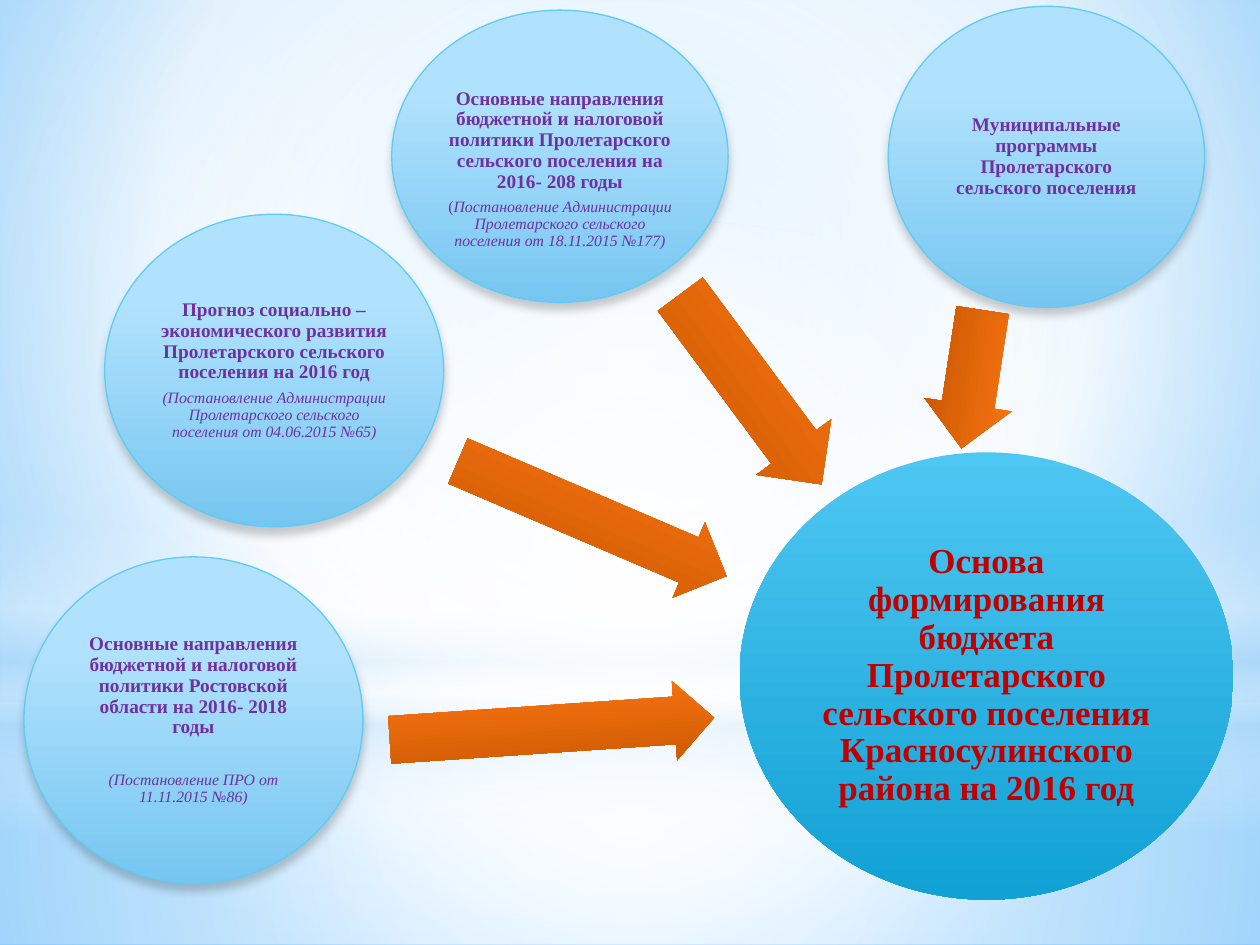
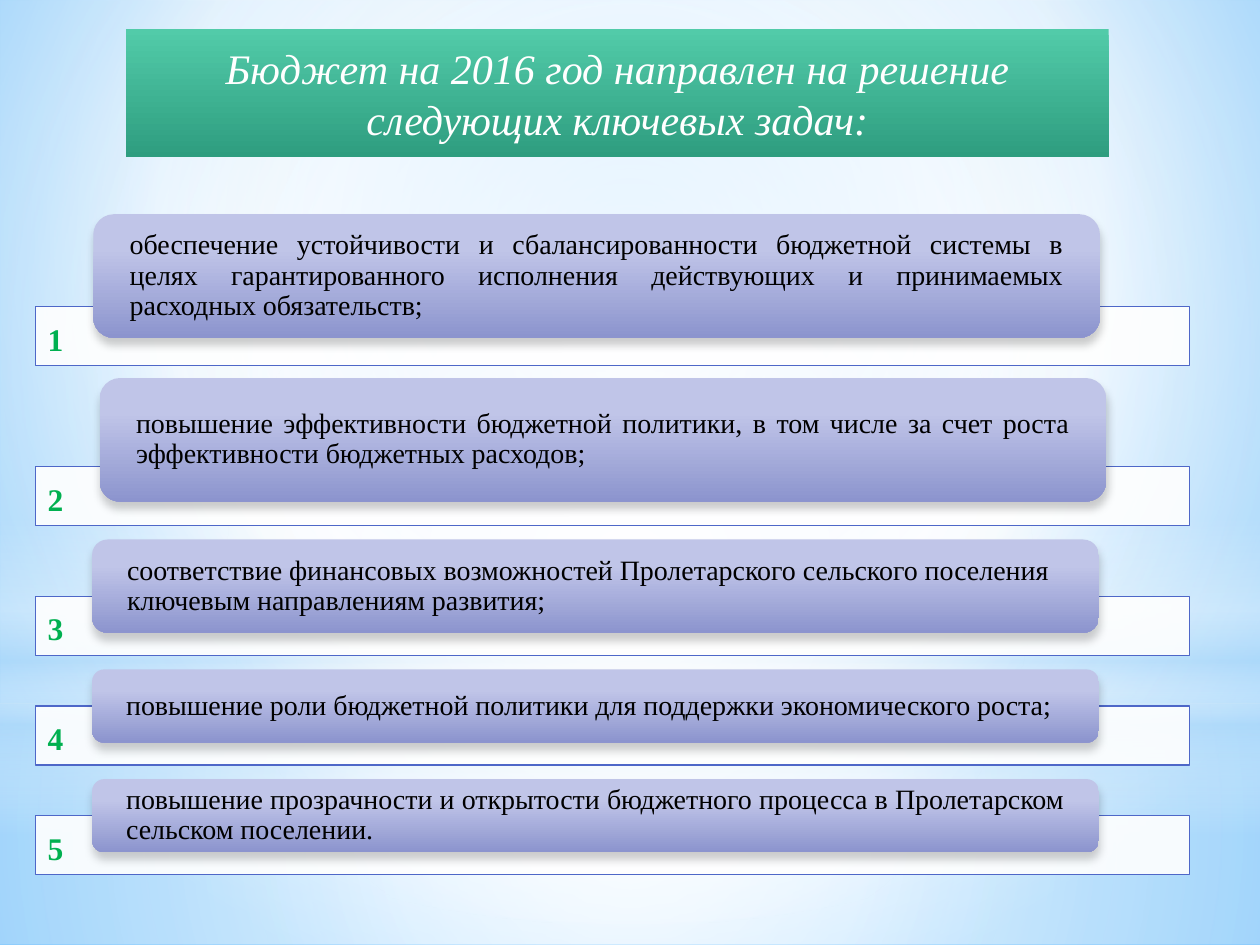
from lxml import etree
from pptx import Presentation
from pptx.dml.color import RGBColor as RGB
from pptx.enum.shapes import MSO_SHAPE as KIND
from pptx.enum.text import MSO_ANCHOR as ANCHOR, MSO_AUTO_SIZE as AUTO, PP_ALIGN as ALIGN
from pptx.oxml.ns import qn
from pptx.util import Pt

FONT = "Times New Roman"
WIDE, HIGH = 720, 540
HEX = {
    "white": "FFFFFF", "black": "000000", "haze": "B4DCFA",
    "sky": "9ED5FF", "blue": "5BB9FF", "rim": "5ECCF3", "edge": "4E67C8",
    "violet": "7030A0", "red": "C00000", "green": "00B050",
}
# Stops: position, colour, opacity
FADES = {
    "back": [(0, HEX["sky"], 100), (60, HEX["white"], 100), (100, HEX["blue"], 100)],
    "floor": [(0, HEX["white"], 91), (37, HEX["white"], 76), (100, HEX["haze"], 79)],
    "wall": [(0, HEX["white"], 89), (48, HEX["white"], 62), (100, HEX["haze"], 79)],
    "mist": [(0, HEX["white"], 0), (29, HEX["white"], 30), (45, HEX["haze"], 40),
             (55, HEX["white"], 26), (65, HEX["haze"], 60), (100, HEX["white"], 0)],
    "glow": [(0, HEX["white"], 100), (56, HEX["white"], 0)],
    "core": [(0, "4EC7F2", 100), (100, "11A1D4", 100)],
    "source": [(28, "B1E2FD", 100), (100, "76C6F1", 100)],
    "arrow": [(0, "FF7813", 100), (100, "C45400", 100)],
    "card": [(28, "C0C5E8", 100), (100, "8C94CE", 100)],
    "title": [(0, "52CBA9", 100), (100, "2E9D7F", 100)],
}
MID = (50, 50, 50, 50)

# Box, top inset, bold text, plain lead, italic text, gap between the two
SOURCES = [
    ((223.9, 5.8, 192.2, 167), 16.5,
     "Основные направления бюджетной и налоговой политики Пролетарского "
     "сельского поселения на 2016- 208 годы",
     "(", "Постановление Администрации Пролетарского сельского "
     "поселения от 18.11.2015 №177)", 0),
    ((507.6, 3.6, 180.7, 172.1), 1.5,
     "Муниципальные программы Пролетарского сельского поселения", "", "", 0),
    ((13.7, 318.2, 193.7, 186.5), 1.5,
     "Основные направления бюджетной и налоговой политики Ростовской "
     "области на 2016- 2018 годы",
     "", "(Постановление ПРО от 11.11.2015 №86)", 15.5),
    ((59.8, 122.4, 193.7, 178.6), 1.5,
     "Прогноз социально – экономического развития Пролетарского "
     "сельского поселения на 2016 год",
     "", "(Постановление Администрации Пролетарского сельского "
     "поселения от 04.06.2015 №65)", 0),
]
ARROWS = [
    ((361.4, 195.8, 135.4, 53.3), 53.4),
    ((515.5, 191.5, 79.9, 50.4), 98.7),
    ((222.5, 393.8, 185.8, 45.4), 356.1),
    ((254.9, 272.9, 167, 46.8), 23.2),
]
# Card height, shift from the regular place, alignment, text
TASKS = [
    (70.6, (0.7, -2.9), ALIGN.JUSTIFY,
     "обеспечение устойчивости и сбалансированности бюджетной системы в целях "
     "гарантированного исполнения действующих и принимаемых расходных обязательств;"),
    (70.6, (4.3, -0.8), ALIGN.JUSTIFY,
     "повышение эффективности бюджетной политики, в том числе за счет роста "
     "эффективности бюджетных расходов;"),
    (53.3, (0, 0), ALIGN.LEFT,
     "соответствие финансовых возможностей Пролетарского сельского поселения "
     "ключевым направлениям развития;"),
    (41.8, (0, 0), ALIGN.LEFT,
     "повышение роли бюджетной политики для поддержки экономического роста;"),
    (41.8, (0, 0), ALIGN.JUSTIFY,
     "повышение прозрачности и открытости бюджетного процесса в Пролетарском "
     "сельском поселении."),
]


def node(top, tag, **attrs):
    item = etree.SubElement(top, qn(tag))
    for key, val in attrs.items():
        item.set(key, str(val))
    return item


def tint(top, color, clear):
    item = node(top, "a:srgbClr", val=color)
    if clear < 100:
        node(item, "a:alpha", val=clear * 1000)


def fade(fill, props, name, focus=None):
    """Give a gradient: downward, or round a focus (left, top, right, bottom)."""
    fill.background()
    old = props.find(qn("a:noFill"))
    grad = etree.Element(qn("a:gradFill"), rotWithShape="1")
    stops = node(grad, "a:gsLst")
    for pos, color, clear in FADES[name]:
        tint(node(stops, "a:gs", pos=pos * 1000), color, clear)
    if focus:
        sides = {side: part * 1000 for side, part in zip("ltrb", focus)}
        node(node(grad, "a:path", path="circle"), "a:fillToRect", **sides)
    else:
        node(grad, "a:lin", ang=90 * 60000, scaled=0)
    props.replace(old, grad)


def place(shape, box):
    shape.left, shape.top, shape.width, shape.height = map(Pt, box)


def draw(slide, kind, box, name=None, focus=None, line=None, shade=False):
    shape = slide.shapes.add_shape(kind, *map(Pt, box))
    props = shape.element.spPr
    if name:
        fade(shape.fill, props, name, focus)
    if line:
        shape.line.color.rgb = RGB.from_string(HEX[line])
        shape.line.width = Pt(0.75)
    else:
        shape.line.fill.background()
    shape.shadow.inherit = False
    if shade:
        cast = node(props.find(qn("a:effectLst")), "a:outerShdw", blurRad=Pt(5),
                    dist=Pt(4), dir=90 * 60000, rotWithShape=0)
        tint(cast, HEX["black"], 20)
    return shape


def inset(shape, left, top, right, bottom):
    frame = shape.text_frame
    frame.word_wrap = True
    frame.auto_size = AUTO.NONE
    frame.vertical_anchor = ANCHOR.MIDDLE
    frame.margin_left, frame.margin_top = Pt(left), Pt(top)
    frame.margin_right, frame.margin_bottom = Pt(right), Pt(bottom)


def write(shape, text, size, color, bold=False, italic=False, align=ALIGN.CENTER,
          lead=0.9, before=0, after=None, join=False):
    """Add a paragraph, or continue the last one when join is set."""
    frame = shape.text_frame
    para = frame.paragraphs[-1]
    if para.runs and not join:
        para = frame.add_paragraph()
    para.alignment = align
    para.line_spacing = lead
    para.space_before = Pt(before)
    para.space_after = Pt(round(size * 0.35, 1) if after is None else after)
    run = para.add_run()
    run.text = text
    font = run.font
    font.name, font.size, font.bold, font.italic = FONT, Pt(size), bold, italic
    font.color.rgb = RGB.from_string(HEX[color])


def backdrop(master, slide):
    """Set the shared background and move its layers to the master."""
    fill = master.background.fill
    fade(fill, master.element.find(".//" + qn("p:bgPr")), "back", (20, 10, 20, 60))
    layers = [
        draw(slide, KIND.RECTANGLE, (0, 402, WIDE, 138), "floor", MID),
        draw(slide, KIND.RECTANGLE, (0, 0, WIDE, 402), "wall", MID),
        draw(slide, KIND.RECTANGLE, (0, 296.6, WIDE, 180), "mist"),
        draw(slide, KIND.OVAL, (0, 126, WIDE, 402), "glow", MID),
    ]
    for pos, layer in enumerate(layers, 2):
        master.shapes.element.insert(pos, layer.element)


def source(slide, box, top, text, lead, note, gap):
    ball = draw(slide, KIND.OVAL, box, "source", line="rim", shade=True)
    inset(ball, 1.5, top, 1.5, 1.5)
    write(ball, text, 11, "violet", bold=True)
    if lead:
        write(ball, lead, 9, "violet")
    if note:
        write(ball, note, 9, "violet", italic=True, before=gap, join=bool(lead))


def arrow(slide, box, turn):
    shape = draw(slide, KIND.RIGHT_ARROW, box, "arrow")
    shape.adjustments[0], shape.adjustments[1] = 0.6, 0.5
    shape.rotation = turn


def basis(slide):
    core = draw(slide, KIND.OVAL, (422.6, 258.5, 282.2, 255.6), "core")
    inset(core, 2, 2, 2, 2)
    write(core, "Основа формирования бюджета Пролетарского сельского поселения "
          "Красносулинского района на 2016 год", 20, "red", bold=True)
    for item in ARROWS:
        arrow(slide, *item)
    for item in SOURCES:
        source(slide, *item)


def band(slide, top, high, num):
    bar = draw(slide, KIND.RECTANGLE, (20.2, top, 659.5, high), line="edge")
    bar.fill.solid()
    bar.fill.fore_color.rgb = RGB.from_string(HEX["white"])
    color = bar.element.spPr.find(qn("a:solidFill"))[0]
    node(color, "a:alpha", val=90000)
    inset(bar, 7.2, 5, 7.2, 2)
    write(bar, str(num), 18, "green", bold=True, align=ALIGN.LEFT, lead=1.0, after=0)


def goals(slide):
    title = slide.shapes.title
    place(title, (72, 16.6, 561.6, 73.4))
    fade(title.fill, title.element.spPr, "title")
    inset(title, 7.2, 3.6, 7.2, 3.6)
    write(title, "Бюджет на 2016 год направлен на решение следующих ключевых задач:",
          24, "white", italic=True, lead=1.0, after=0)

    top, lap, thick, gap = 125.3, 20.9, 33.8, 8
    for num, (high, (right, down), align, text) in enumerate(TASKS, 1):
        base = top + high - lap
        band(slide, base, thick, num)
        card = draw(slide, KIND.ROUNDED_RECTANGLE,
                    (52.6 + right, top + down, 575.3, high), "card", shade=True)
        inset(card, 17.4, 0, 17.4, 0)
        write(card, text, 16, "black", align=align)
        top = base + thick + gap


def main():
    deck = Presentation()
    deck.slide_width, deck.slide_height = Pt(WIDE), Pt(HIGH)
    first = deck.slides.add_slide(deck.slide_layouts[6])
    backdrop(deck.slide_master, first)
    basis(first)
    goals(deck.slides.add_slide(deck.slide_layouts[5]))
    deck.save("out.pptx")


if __name__ == "__main__":
    main()
